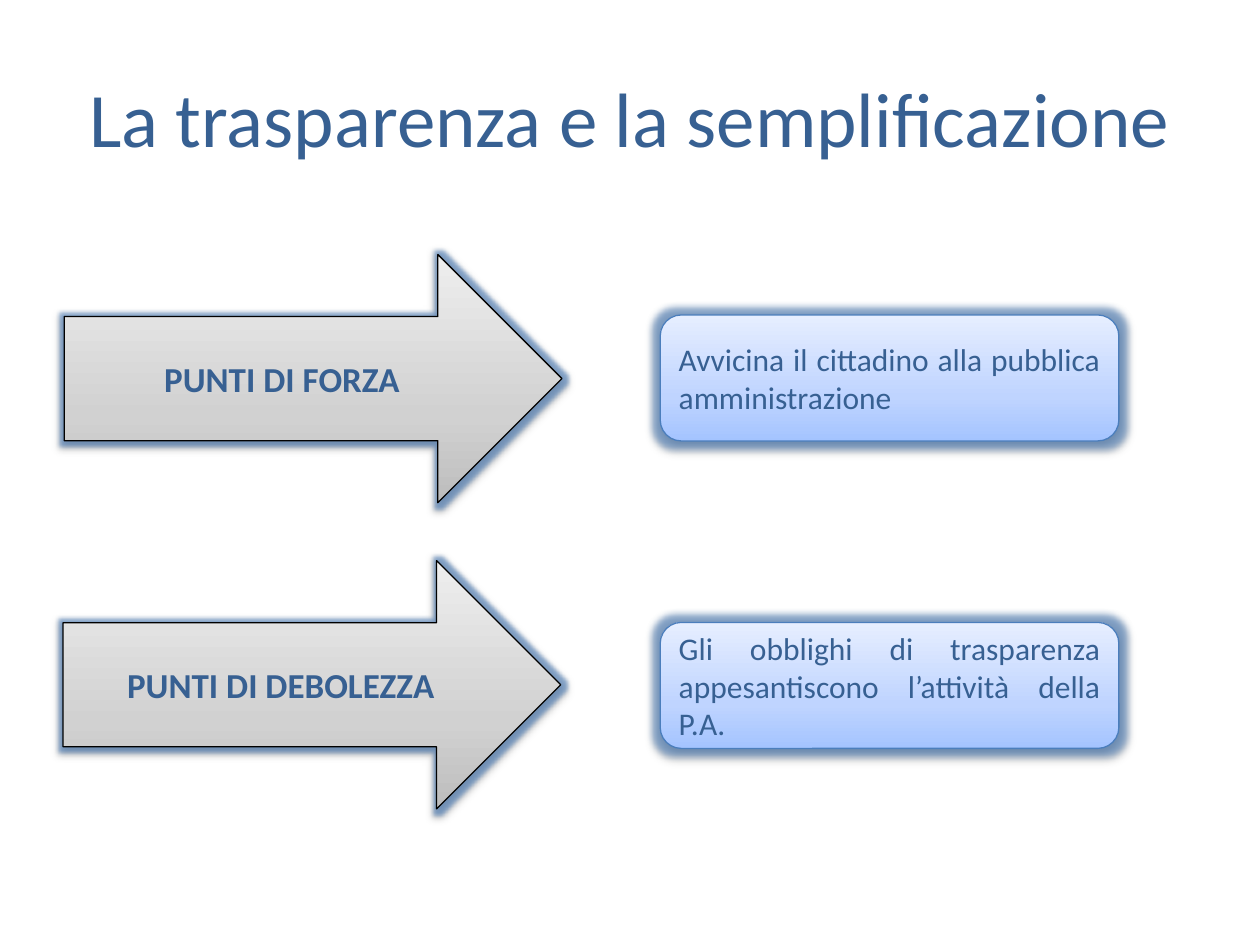
import copy

import pptx
import pptx.dml.color
import pptx.enum.shapes
import pptx.enum.text
import pptx.oxml
import pptx.oxml.ns
import pptx.util

Inches, Pt = pptx.util.Inches, pptx.util.Pt
RGBColor = pptx.dml.color.RGBColor
ALIGN = pptx.enum.text.PP_ALIGN
SHAPE = pptx.enum.shapes.MSO_SHAPE
MIDDLE = pptx.enum.text.MSO_ANCHOR.MIDDLE

# Content
TITLE = "La trasparenza e la semplificazione"
# Arrow label, arrow left and top, explanation, box top
ROWS = [
    ("PUNTI DI FORZA", 0.51, 2.02,
     "Avvicina il cittadino alla pubblica amministrazione", 2.5),
    ("PUNTI DI DEBOLEZZA", 0.5, 4.45,
     "Gli obblighi di trasparenza appesantiscono l’attività della P.A.", 4.94),
]

# Formats
TEXT_BLUE = RGBColor(0x37, 0x60, 0x92)
BLACK = RGBColor(0x00, 0x00, 0x00)
BOX_LINE = RGBColor(0x4B, 0x7E, 0xBC)
GRAYS = [RGBColor(0xBD, 0xBD, 0xBD), RGBColor(0xD1, 0xD1, 0xD1), RGBColor(0xEE, 0xEE, 0xEE)]
BLUES = [RGBColor(0xA4, 0xC4, 0xFF), RGBColor(0xBF, 0xD4, 0xFF), RGBColor(0xE6, 0xEE, 0xFF)]
STOP_POSITIONS = [0, 0.35, 1]
BASE_FONT = {"name": "Calibri", "bold": False}
TITLE_FONT = {**BASE_FONT, "size": Pt(44)}
ARROW = {
    "kind": SHAPE.RIGHT_ARROW, "size": (3.95, 1.97), "colors": GRAYS, "line": BLACK,
    "glow": 5, "font": {**BASE_FONT, "size": Pt(20), "bold": True},
    "paragraph": {"alignment": ALIGN.CENTER, "space_before": Pt(4)},
}
BOX = {
    "kind": SHAPE.ROUNDED_RECTANGLE, "size": (3.64, 1), "colors": BLUES, "line": BOX_LINE,
    "glow": 8, "font": {**BASE_FONT, "size": Pt(18)},
    "paragraph": {"alignment": ALIGN.JUSTIFY},
}
BOX_LEFT = 5.24
EFFECTS = """<a:effectLst {namespace}>
  <a:glow rad="{radius}"><a:srgbClr val="4F81BD"><a:alpha val="60000"/></a:srgbClr></a:glow>
  <a:outerShdw blurRad="40000" dist="20000" dir="5400000" rotWithShape="0">
    <a:srgbClr val="000000"><a:alpha val="38000"/></a:srgbClr>
  </a:outerShdw>
</a:effectLst>"""


def set_values(target, values):
    for name, value in values.items():
        setattr(target, name, value)


def write_text(shape, text, font, paragraph_format):
    frame = shape.text_frame
    set_values(frame, {"text": text, "word_wrap": True, "vertical_anchor": MIDDLE})
    paragraph = frame.paragraphs[0]
    set_values(paragraph, paragraph_format)
    set_values(paragraph.runs[0].font, font)
    paragraph.runs[0].font.color.rgb = TEXT_BLUE


def fill_gradient(shape, colors):
    shape.fill.gradient()
    shape.fill.gradient_angle = 90
    stop_list = shape._element.spPr.find(".//" + pptx.oxml.ns.qn("a:gsLst"))
    stop_list.append(copy.deepcopy(stop_list[-1]))
    for stop, position, color in zip(shape.fill.gradient_stops, STOP_POSITIONS, colors):
        stop.position = position
        stop.color.rgb = color


def add_block(slide, left, top, text, style):
    shape = slide.shapes.add_shape(
        style["kind"], *(Inches(value) for value in (left, top, *style["size"])))
    fill_gradient(shape, style["colors"])
    shape.line.color.rgb = style["line"]
    shape.line.width = Pt(0.75)
    # Glow and soft shadow
    shape._element.spPr.append(pptx.oxml.parse_xml(EFFECTS.format(
        namespace=pptx.oxml.ns.nsdecls("a"), radius=Pt(style["glow"]))))
    write_text(shape, text, style["font"], style["paragraph"])


def main():
    presentation = pptx.Presentation()
    presentation.slide_width, presentation.slide_height = Inches(10), Inches(7.5)
    slide = presentation.slides.add_slide(presentation.slide_layouts[5])

    # Title
    title = slide.shapes.title
    set_values(title, {"left": Inches(0.5), "top": Inches(0.3),
                       "width": Inches(9), "height": Inches(1.25)})
    write_text(title, TITLE, TITLE_FONT, {"alignment": ALIGN.CENTER})

    # Arrows with their explanations
    for label, arrow_left, arrow_top, explanation, box_top in ROWS:
        add_block(slide, arrow_left, arrow_top, label, ARROW)
        add_block(slide, BOX_LEFT, box_top, explanation, BOX)

    presentation.save("out.pptx")


if __name__ == "__main__":
    main()
